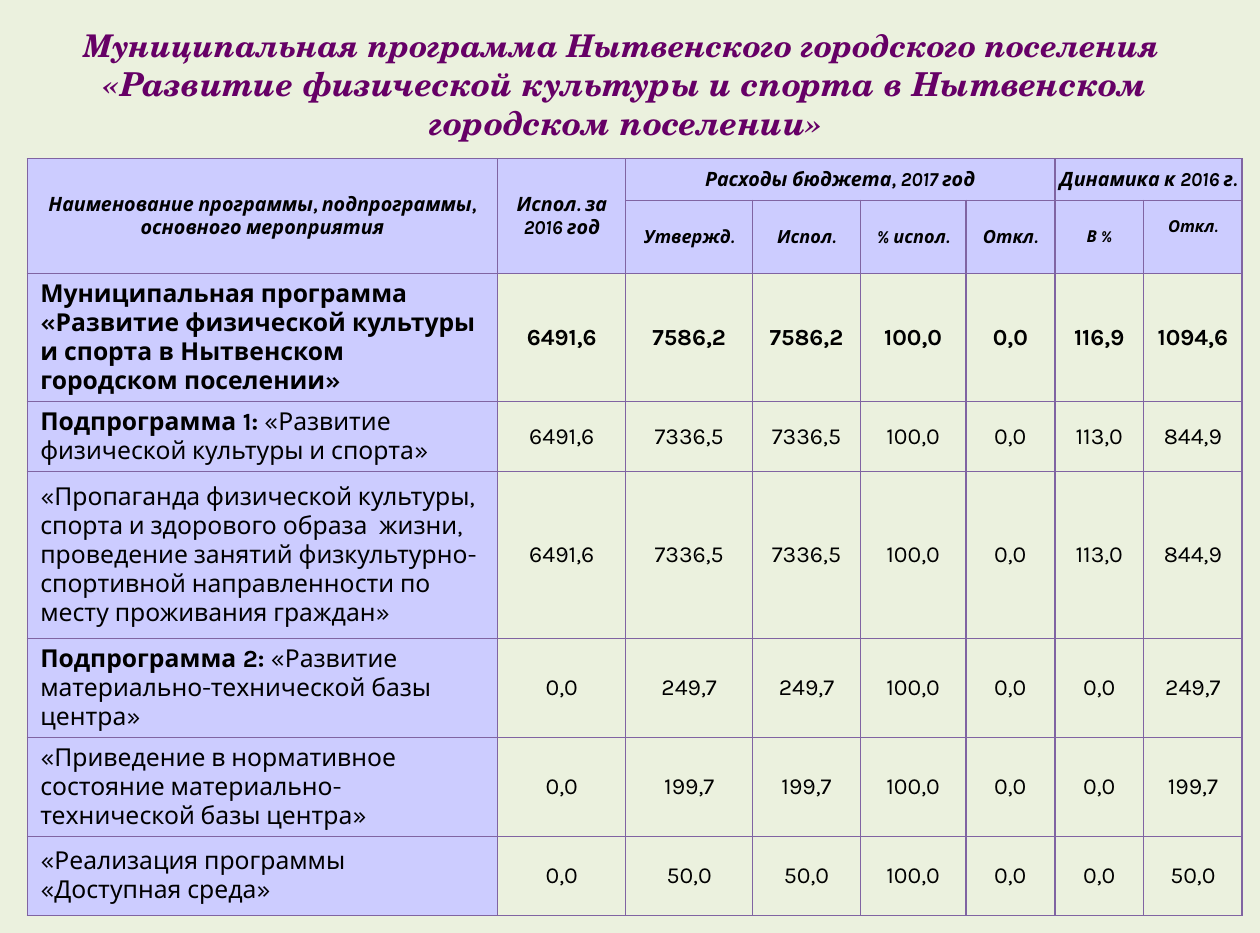
from lxml import etree
from pptx import Presentation
from pptx.dml.color import RGBColor
from pptx.enum import text
from pptx.oxml import ns
from pptx.util import Inches, Pt

BACKGROUND = RGBColor(0xEB, 0xF1, 0xDE)
LILAC = RGBColor(0xCC, 0xCC, 0xFF)
BORDER = RGBColor(0x80, 0x64, 0xA2)
PURPLE = RGBColor(0x66, 0x00, 0x66)
BLACK = RGBColor(0, 0, 0)

TITLE_FONT, TABLE_FONT = "TeX Gyre Schola", "Karla"
WIDE_MARGINS = (0.11, 0.05, 0.11, 0.05)
TIGHT_MARGINS = (0.01, 0.01, 0.01, 0)
RAISED_MARGINS = (0.01, 0.01, 0.01, 0.17)

COLUMN_WIDTHS = (3.97, 1.08, 1.07, 0.91, 0.89, 0.75, 0.75, 0.83)
ROW_HEIGHTS = (0.35, 0.62, 0.8, 0.57, 1.41, 0.57, 0.66, 0.67)

# Row, column, rows spanned, columns spanned, wording, size, margins
HEADERS = [
    (0, 0, 2, 1, "Наименование программы, подпрограммы, основного мероприятия", 12, WIDE_MARGINS),
    (0, 1, 2, 1, "Испол. за 2016 год", 12, WIDE_MARGINS),
    (0, 2, 1, 4, "Расходы бюджета, 2017 год", 12, WIDE_MARGINS),
    (0, 6, 1, 2, "Динамика к 2016 г.", 12, TIGHT_MARGINS),
    (1, 2, 1, 1, "Утвержд.", 11, WIDE_MARGINS),
    (1, 3, 1, 1, "Испол.", 11, WIDE_MARGINS),
    (1, 4, 1, 1, "% испол.", 11, WIDE_MARGINS),
    (1, 5, 1, 1, "Откл.", 11, WIDE_MARGINS),
    (1, 6, 1, 1, "В %", 10, TIGHT_MARGINS),
    (1, 7, 1, 1, "Откл.", 10, RAISED_MARGINS),
]

# Bold part of the label, plain part, values
PROGRAMMES = [
    ("Муниципальная программа «Развитие физической культуры и спорта в Нытвенском "
     "городском поселении»", "",
     ("6491,6", "7586,2", "7586,2", "100,0", "0,0", "116,9", "1094,6")),
    ("Подпрограмма 1:", " «Развитие физической культуры и спорта»",
     ("6491,6", "7336,5", "7336,5", "100,0", "0,0", "113,0", "844,9")),
    ("", "«Пропаганда физической культуры, спорта и здорового образа  жизни, проведение "
     "занятий физкультурно-спортивной направленности по месту проживания граждан»",
     ("6491,6", "7336,5", "7336,5", "100,0", "0,0", "113,0", "844,9")),
    ("Подпрограмма 2: ", "«Развитие материально-технической базы центра»",
     ("0,0", "249,7", "249,7", "100,0", "0,0", "0,0", "249,7")),
    ("", "«Приведение в нормативное состояние материально-технической базы центра»",
     ("0,0", "199,7", "199,7", "100,0", "0,0", "0,0", "199,7")),
    ("", "«Реализация программы «Доступная среда»",
     ("0,0", "50,0", "50,0", "100,0", "0,0", "0,0", "50,0")),
]


def add_text(paragraph, wording, size, font=TABLE_FONT, color=BLACK, bold=False,
             italic=False, align=text.PP_ALIGN.CENTER):
    paragraph.alignment = align
    run = paragraph.add_run()
    run.text = wording
    run.font.name = font
    run.font.size = Pt(size)
    run.font.color.rgb = color
    run.font.bold = bold
    run.font.italic = italic


def set_margins(holder, margins):
    left, top, right, bottom = map(Inches, margins)
    holder.margin_left, holder.margin_top = left, top
    holder.margin_right, holder.margin_bottom = right, bottom


def style_cell(cell, fill):
    cell.fill.solid()
    cell.fill.fore_color.rgb = fill
    cell.vertical_anchor = text.MSO_ANCHOR.MIDDLE
    set_margins(cell, WIDE_MARGINS)
    # Borders come before the fill in the cell properties
    properties = cell._tc.get_or_add_tcPr()
    for position, side in enumerate(("lnL", "lnR", "lnT", "lnB")):
        line = etree.Element(ns.qn(f"a:{side}"), w=str(Pt(1)))
        solid = etree.SubElement(line, ns.qn("a:solidFill"))
        etree.SubElement(solid, ns.qn("a:srgbClr"), val=str(BORDER))
        properties.insert(position, line)


def place_title(slide, left, top, width, height):
    title = slide.shapes.title
    title.left, title.top, title.width, title.height = map(Inches, (left, top, width, height))
    frame = title.text_frame
    frame.word_wrap = True
    frame.auto_size = text.MSO_AUTO_SIZE.NONE
    frame.vertical_anchor = text.MSO_ANCHOR.MIDDLE
    set_margins(frame, WIDE_MARGINS)
    paragraph = frame.paragraphs[0]
    style = dict(font=TITLE_FONT, color=PURPLE, bold=True, italic=True)
    add_text(paragraph, "Муниципальная программа Нытвенского городского поселения ", 19, **style)
    paragraph.add_line_break()
    add_text(paragraph, "«Развитие физической культуры и спорта в Нытвенском "
             "городском поселении»", 20, **style)


def place_budget_table(slide, left, top, width, height):
    table = slide.shapes.add_table(len(ROW_HEIGHTS), len(COLUMN_WIDTHS),
                                   *map(Inches, (left, top, width, height))).table
    for column, column_width in zip(table.columns, COLUMN_WIDTHS):
        column.width = Inches(column_width)
    for row, row_height in zip(table.rows, ROW_HEIGHTS):
        row.height = Inches(row_height)

    # Fills and borders
    for r in range(len(ROW_HEIGHTS)):
        for c in range(len(COLUMN_WIDTHS)):
            style_cell(table.cell(r, c), LILAC if r < 2 or c == 0 else BACKGROUND)

    # Header
    for r, c, row_span, column_span, wording, size, margins in HEADERS:
        cell = table.cell(r, c)
        if row_span * column_span > 1:
            cell.merge(table.cell(r + row_span - 1, c + column_span - 1))
        set_margins(cell, margins)
        add_text(cell.text_frame.paragraphs[0], wording, size, bold=True, italic=True)

    # Programmes and their values
    for r, (bold_part, plain_part, values) in enumerate(PROGRAMMES, start=2):
        label = table.cell(r, 0).text_frame.paragraphs[0]
        for wording, bold in ((bold_part, True), (plain_part, False)):
            if wording:
                add_text(label, wording, 15, bold=bold, align=text.PP_ALIGN.LEFT)
        for c, value in enumerate(values, start=1):
            add_text(table.cell(r, c).text_frame.paragraphs[0], value, 14,
                     bold=not plain_part)


def main():
    presentation = Presentation()
    presentation.slide_width, presentation.slide_height = Inches(10.63), Inches(63 / 8)
    slide = presentation.slides.add_slide(presentation.slide_layouts[5])
    slide.background.fill.solid()
    slide.background.fill.fore_color.rgb = BACKGROUND
    place_title(slide, 0.32, 0.27, 9.92, 0.88)
    place_budget_table(slide, 0.23, 1.34, sum(COLUMN_WIDTHS), sum(ROW_HEIGHTS))
    presentation.save("out.pptx")


if __name__ == "__main__":
    main()
